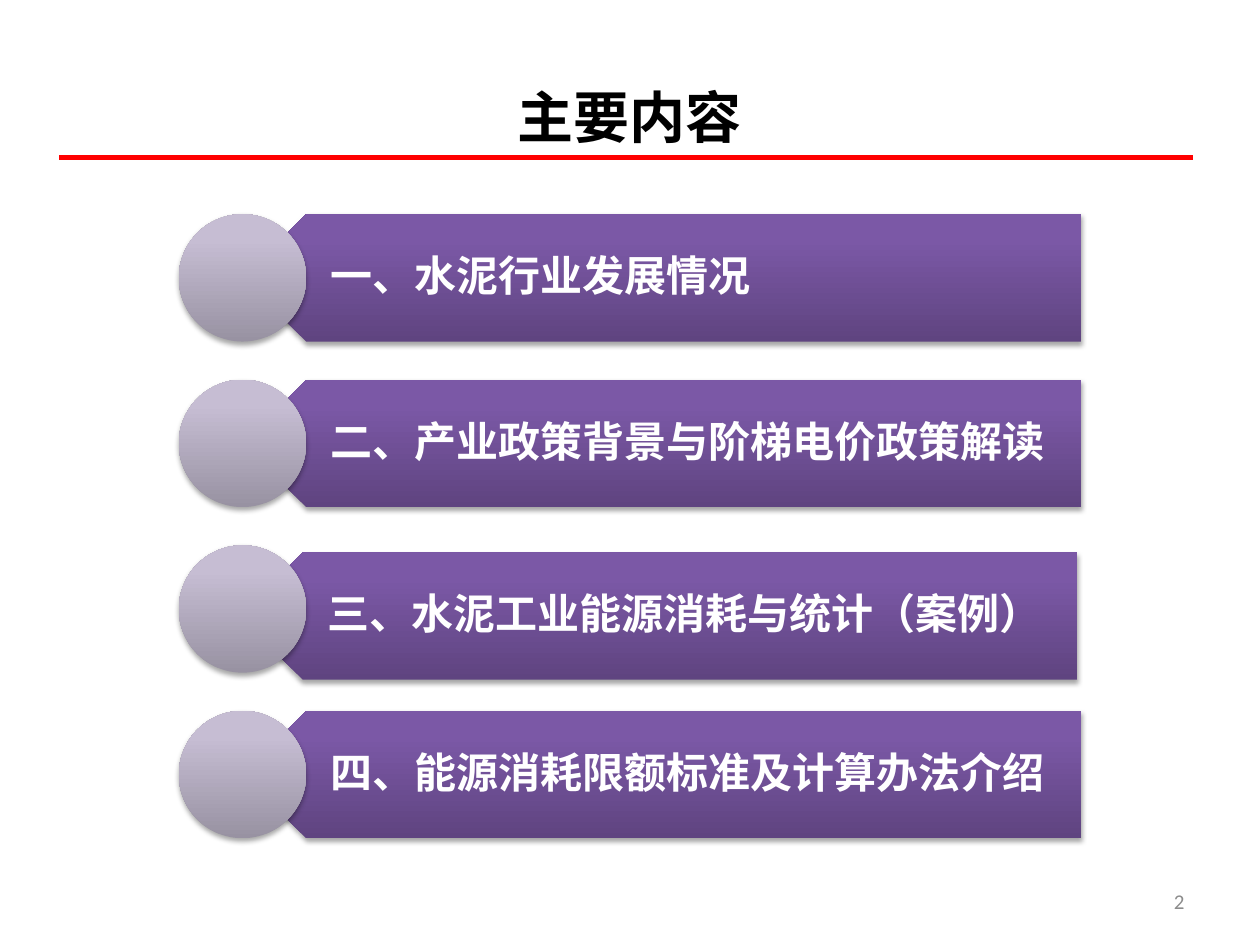
import pptx
import pptx.util
import pptx.dml.color
import pptx.enum.shapes
import pptx.enum.text
import pptx.oxml
import pptx.oxml.ns
from dataclasses import dataclass
from lxml import etree

Pt = pptx.util.Pt
Shape = pptx.enum.shapes.MSO_SHAPE
Align = pptx.enum.text.PP_ALIGN
Middle = pptx.enum.text.MSO_ANCHOR.MIDDLE
NS = pptx.oxml.ns.nsdecls("a")


@dataclass(frozen=True)
class Theme:
    latin: str = "Calibri"
    cjk: str = "Noto Sans CJK SC"
    title: str = "000000"
    item: str = "FFFFFF"
    num: str = "8C8C8C"
    rule: str = "FF0000"
    bar: tuple = ((0, "5F4480"), (80, "7B58A6"), (100, "7C57A8"))
    disc: tuple = ((0, "9892A2"), (80, "C6BDD3"), (100, "C6BED4"))
    title_size: int = 32
    item_size: int = 24
    num_size: int = 12
    rule_width: float = 2.5


THEME = Theme()
# Each topic with the shift of its bar from the row's box
TOPICS = [
    ("一、水泥行业发展情况", 0, 0),
    ("二、产业政策背景与阶梯电价政策解读", 0, 0),
    ("三、水泥工业能源消耗与统计（案例）", -2, 4),
    ("四、能源消耗限额标准及计算办法介绍", 0, 0),
]


def color(code):
    return pptx.dml.color.RGBColor.from_string(code)


def write(frame, text, size, code, font, bold=False, align=Align.LEFT):
    frame.word_wrap = True
    frame.vertical_anchor = Middle
    para = frame.paragraphs[0]
    para.alignment = align
    run = para.add_run()
    run.text = text
    run.font.size = Pt(size)
    run.font.bold = bold
    run.font.name = font
    run.font.color.rgb = color(code)
    return para, run


def solid(parent, kind, box, stops):
    """Add a borderless shape with an upward gradient and a soft shadow."""
    shape = parent.shapes.add_shape(kind, *map(Pt, box))
    shape.line.fill.background()
    shape.fill.background()
    shape.shadow.inherit = False
    props = shape.element.spPr
    marks = "".join(
        f'<a:gs pos="{pos * 1000}"><a:srgbClr val="{code}"/></a:gs>'
        for pos, code in stops)
    props.replace(props.find(pptx.oxml.ns.qn("a:noFill")), pptx.oxml.parse_xml(
        f'<a:gradFill {NS} rotWithShape="0"><a:gsLst>{marks}</a:gsLst>'
        '<a:lin ang="16200000" scaled="0"/></a:gradFill>'))
    props.find(pptx.oxml.ns.qn("a:effectLst")).append(pptx.oxml.parse_xml(
        f'<a:outerShdw {NS} blurRad="{Pt(3.1)}" dist="{Pt(1.8)}" '
        'dir="5400000" rotWithShape="0"><a:srgbClr val="000000">'
        '<a:alpha val="35000"/></a:srgbClr></a:outerShdw>'))
    return shape


def add_head(slide, box):
    left, top, width, height = box
    title = slide.shapes.title
    title.left, title.top, title.width, title.height = map(Pt, box)
    write(title.text_frame, "主要内容", THEME.title_size, THEME.title,
          THEME.latin, True, Align.CENTER)
    y = Pt(top + 68.4)
    line = slide.shapes.add_connector(
        pptx.enum.shapes.MSO_CONNECTOR.STRAIGHT,
        Pt(left - 2), y, Pt(left + width - 2), y)
    line.line.color.rgb = color(THEME.rule)
    line.line.width = Pt(THEME.rule_width)
    etree.SubElement(line.element.spPr, pptx.oxml.ns.qn("a:effectLst"))


def add_row(parent, box, text, dx, dy):
    left, top, width, side = box
    x, y = left + side / 2 + dx, top + dy
    bar = solid(parent, Shape.PENTAGON,
                (x, y, width - side / 2, side), THEME.bar)
    bar.rotation = 180
    inset = side / 4
    label = parent.shapes.add_textbox(
        Pt(x + inset), Pt(y), Pt(width - side / 2 - inset), Pt(side))
    frame = label.text_frame
    frame.margin_left, frame.margin_right = Pt(32.2), Pt(13.7)
    frame.margin_top = frame.margin_bottom = Pt(7.2)
    para, run = write(frame, text, THEME.item_size, THEME.item,
                      THEME.cjk, True)
    para.line_spacing = 0.9
    east = etree.SubElement(run.font._element, pptx.oxml.ns.qn("a:ea"))
    east.set("typeface", THEME.cjk)
    solid(parent, Shape.OVAL, (left, top, side, side), THEME.disc)


def add_list(slide, box):
    left, top, width, height = box
    side = 72.8
    pitch = (height - side) / (len(TOPICS) - 1)
    group = slide.shapes.add_group_shape()
    for i, (text, dx, dy) in enumerate(TOPICS):
        add_row(group, (left, top + i * pitch, width, side), text, dx, dy)


def add_num(slide, box):
    label = slide.shapes.add_textbox(*map(Pt, box))
    write(label.text_frame, "2", THEME.num_size, THEME.num, THEME.latin,
          align=Align.RIGHT)


def main():
    deck = pptx.Presentation()
    deck.slide_width, deck.slide_height = Pt(720), Pt(540)
    slide = deck.slides.add_slide(deck.slide_layouts[5])
    add_head(slide, (36, 21.6, 648, 90))
    add_num(slide, (516, 500.5, 168, 28.8))
    add_list(slide, (102.2, 122.4, 515.5, 356.6))
    deck.save("out.pptx")


if __name__ == "__main__":
    main()
